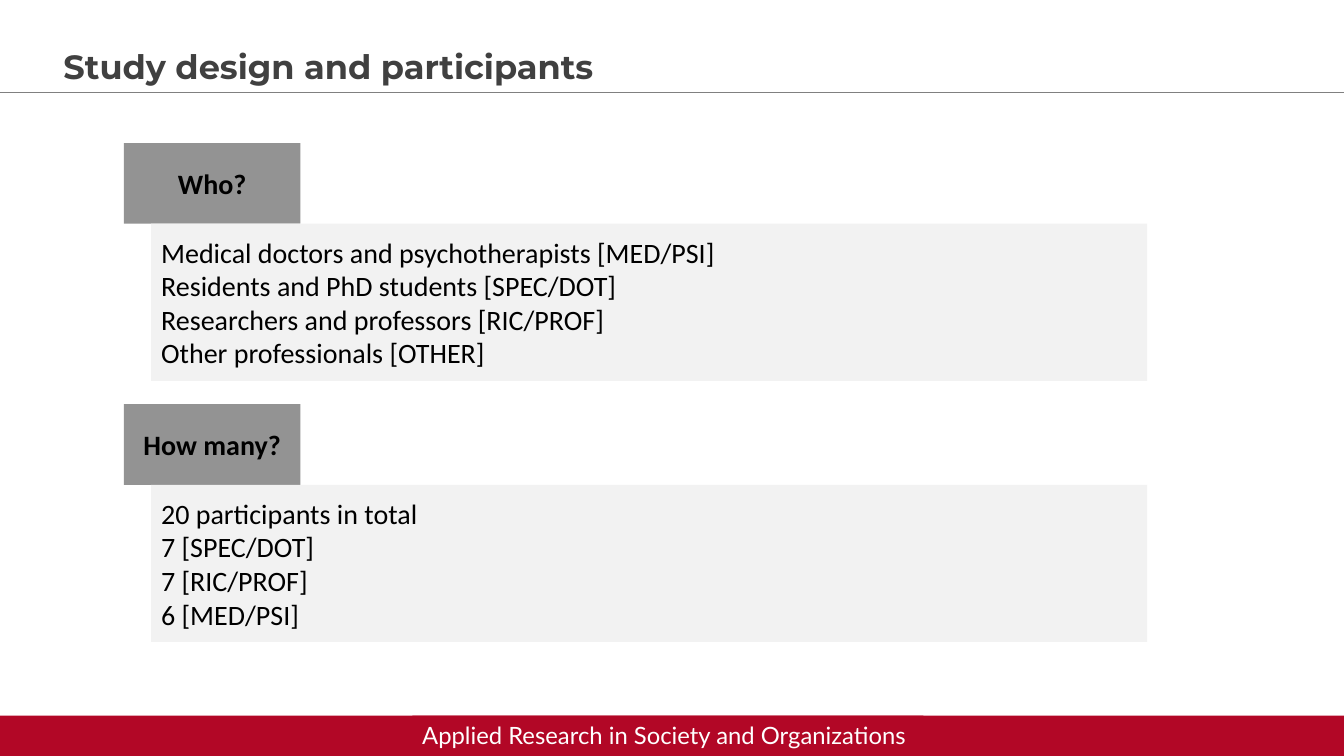
from dataclasses import dataclass

from lxml.etree import SubElement
from pptx import Presentation
from pptx.dml.color import RGBColor
from pptx.enum.shapes import MSO_CONNECTOR, MSO_SHAPE
from pptx.enum.text import MSO_ANCHOR, PP_ALIGN
from pptx.oxml.ns import qn
from pptx.util import Inches, Pt

COLUMNS, ROWS = 133.33, 75  # grid cells of a tenth of an inch


@dataclass(frozen=True)
class Theme:
    title_font: str = "Montserrat"
    body_font: str = "Calibri"
    footer_font: str = "Lato"
    title_size: int = 24
    body_size: int = 20
    footer_size: int = 17
    title_color: str = "404040"
    text_color: str = "000000"
    footer_color: str = "FFFFFF"
    rule_color: str = "808080"
    accent: str = "B20726"
    label_fill: str = "939393"
    panel_fill: str = "F2F2F2"


def cells(count):
    return Inches(count / 10)


def write_text(frame, text, *, font, size, color, bold=False,
               align=PP_ALIGN.LEFT, anchor=MSO_ANCHOR.MIDDLE):
    """Fill a text frame, one paragraph for each line of text."""
    frame.word_wrap = True
    frame.vertical_anchor = anchor
    frame.text = text
    for paragraph in frame.paragraphs:
        paragraph.alignment = align
        paragraph.line_spacing = 1.0
        paragraph.space_before = Pt(0)
        for run in paragraph.runs:
            run.font.name = font
            run.font.size = Pt(size)
            run.font.bold = bold
            run.font.color.rgb = RGBColor.from_string(color)


class SlideBuilder:
    """Places styled elements on one slide, in grid columns and rows."""

    def __init__(self, presentation, theme):
        self.theme = theme
        self.slide = presentation.slides.add_slide(presentation.slide_layouts[5])

    def title(self, text, left, top, width, height):
        shape = self.slide.shapes.title
        shape.left, shape.top = cells(left), cells(top)
        shape.width, shape.height = cells(width), cells(height)
        write_text(shape.text_frame, text, font=self.theme.title_font,
                   size=self.theme.title_size, color=self.theme.title_color,
                   bold=True, anchor=MSO_ANCHOR.TOP)

    def rule(self, row):
        line = self.slide.shapes.add_connector(
            MSO_CONNECTOR.STRAIGHT, 0, cells(row), cells(COLUMNS), cells(row))
        line.line.color.rgb = RGBColor.from_string(self.theme.rule_color)
        line.line.width = Pt(0.25)
        SubElement(line.element.spPr, qn("a:effectLst"))

    def box(self, left, top, width, height, fill):
        shape = self.slide.shapes.add_shape(
            MSO_SHAPE.RECTANGLE, cells(left), cells(top), cells(width), cells(height))
        shape.shadow.inherit = False
        shape.fill.solid()
        shape.fill.fore_color.rgb = RGBColor.from_string(fill)
        shape.line.fill.background()
        return shape

    def section(self, top, heading, lines):
        """Draw a heading label with its panel of answers below."""
        theme = self.theme
        body = dict(font=theme.body_font, size=theme.body_size, color=theme.text_color)
        label = self.box(12.3, top, 17.5, 8, theme.label_fill)
        write_text(label.text_frame, heading, bold=True, align=PP_ALIGN.CENTER, **body)
        panel = self.box(15, top + 8, 98.8, 15.6, theme.panel_fill)
        write_text(panel.text_frame, "\n".join(lines), **body)

    def footer(self, text):
        theme = self.theme
        self.box(0, ROWS - 4, COLUMNS, 4, theme.accent)
        caption = self.box(40.9, ROWS - 4, 50.7, 3.9, theme.accent)
        write_text(caption.text_frame, text, font=theme.footer_font,
                   size=theme.footer_size, color=theme.footer_color,
                   anchor=MSO_ANCHOR.TOP)


SECTIONS = {
    "Who?": [
        "Medical doctors and psychotherapists [MED/PSI]",
        "Residents and PhD students [SPEC/DOT]",
        "Researchers and professors [RIC/PROF]",
        "Other professionals [OTHER]",
    ],
    "How many?": [
        "20 participants in total",
        "7 [SPEC/DOT]",
        "7 [RIC/PROF]",
        "6 [MED/PSI]",
    ],
}


def main():
    presentation = Presentation()
    presentation.slide_width = cells(COLUMNS)
    presentation.slide_height = cells(ROWS)
    builder = SlideBuilder(presentation, Theme())
    builder.rule(9.1)
    builder.title("Study design and participants", 5.3, 4.1, 100.3, 5)
    builder.footer("Applied Research in Society and Organizations")
    for index, (heading, lines) in enumerate(SECTIONS.items()):
        builder.section(14.2 + 25.9 * index, heading, lines)
    presentation.save("out.pptx")


if __name__ == "__main__":
    main()
